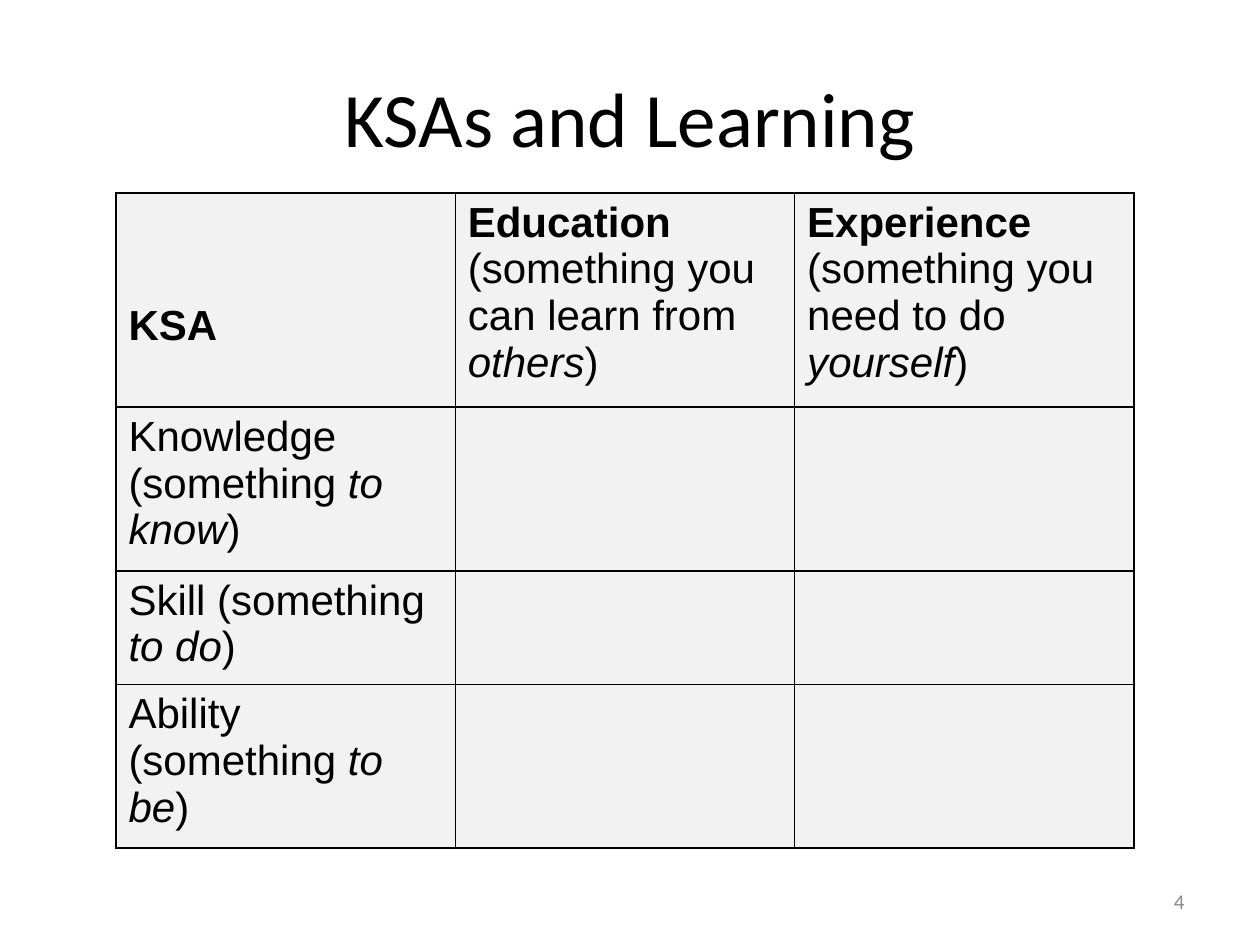
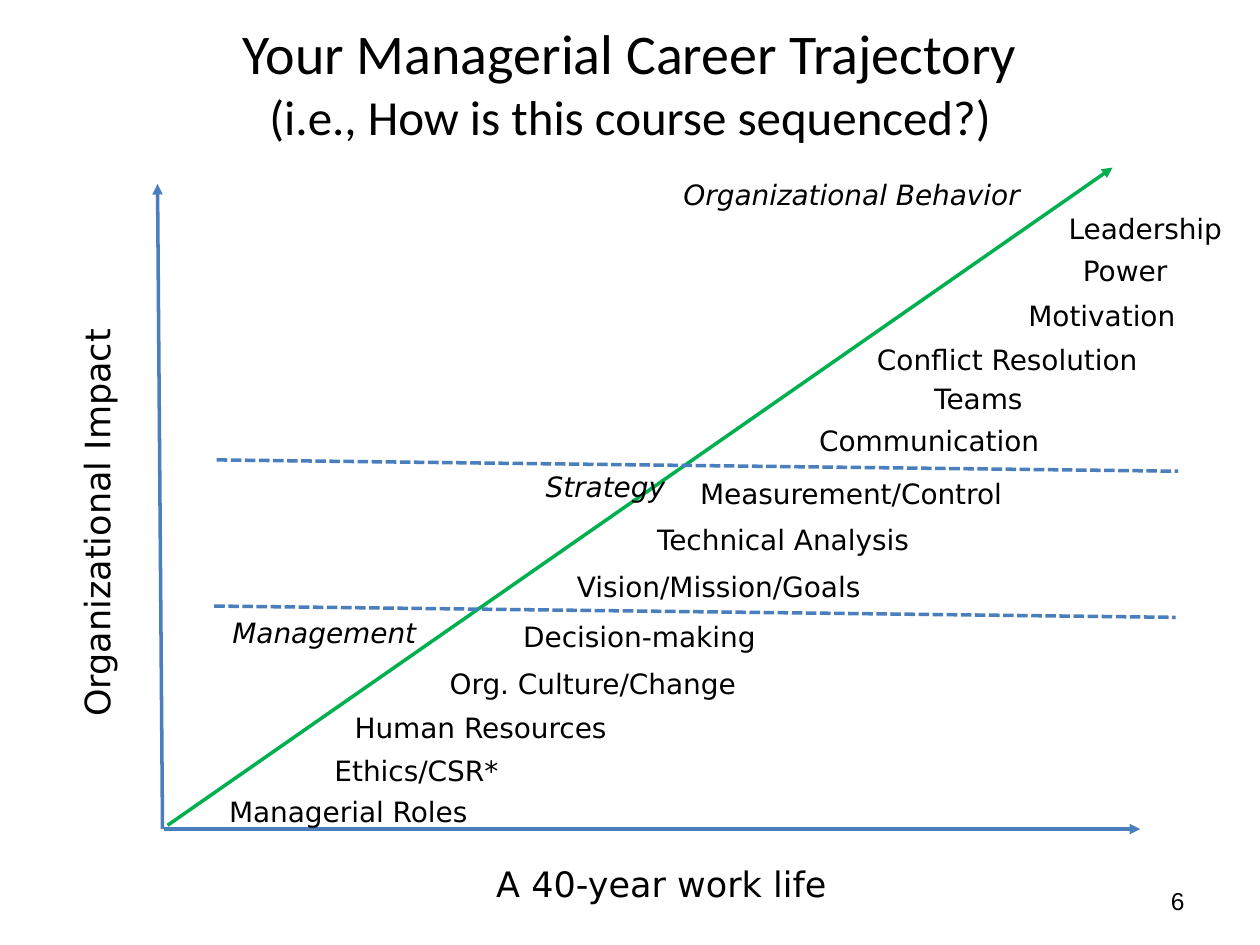
import lxml.etree
import pptx
import pptx.dml.color
import pptx.enum.dml
import pptx.enum.shapes
import pptx.enum.text
import pptx.oxml.ns
import pptx.util

Inches = pptx.util.Inches
Pt = pptx.util.Pt
qn = pptx.oxml.ns.qn
ALIGN = pptx.enum.text.PP_ALIGN
ANCHOR = pptx.enum.text.MSO_ANCHOR

HUES = {
    "ink": "000000",
    "gray": "898989",
    "cell": "F2F2F2",
    "blue": "4B7EBC",
    "green": "00B050",
}


class Deck:
    """Holds the shared style and the current slide."""

    def __init__(self):
        self.prs = pptx.Presentation()
        self.prs.slide_width = Inches(10)
        self.prs.slide_height = Inches(7.5)
        self.slide = None

    def hue(self, name):
        return pptx.dml.color.RGBColor.from_string(HUES[name])

    def font(self, para, size, face, hue="ink", italic=None):
        para.font.size = Pt(size)
        para.font.name = face
        para.font.color.rgb = self.hue(hue)
        para.font.italic = italic

    def text(self, box, lines, face="DejaVu Sans", hue="ink", italic=None,
             align=ALIGN.CENTER, anchor=ANCHOR.TOP, turn=0):
        shape = self.slide.shapes.add_textbox(*map(Inches, box))
        shape.rotation = turn
        frame = shape.text_frame
        frame.word_wrap = True
        frame.vertical_anchor = anchor
        for spot, (words, size) in enumerate(lines):
            para = frame.add_paragraph() if spot else frame.paragraphs[0]
            para.text = words
            para.alignment = align
            self.font(para, size, face, hue, italic)

    def page(self, lines, height, number, size, face, hue):
        self.slide = self.prs.slides.add_slide(self.prs.slide_layouts[6])
        self.text((0.5, 0.3, 9, height), lines, "Calibri", anchor=ANCHOR.MIDDLE)
        self.text((7.17, 6.95, 2.33, 0.4), [(number, size)], face, hue,
                  align=ALIGN.RIGHT, anchor=ANCHOR.MIDDLE)

    def label(self, words, left, top, width, italic=None):
        self.text((left, top, width, 0.37), [(words, 16)], italic=italic)

    def line(self, start, end, hue="blue", dash=False):
        line = self.slide.shapes.add_connector(
            pptx.enum.shapes.MSO_CONNECTOR.STRAIGHT,
            *map(Inches, start + end))
        line.line.color.rgb = self.hue(hue)
        line.line.width = Pt(2)
        if dash:
            line.line.dash_style = pptx.enum.dml.MSO_LINE.SQUARE_DOT
        else:
            stroke = line.line._get_or_add_ln()
            lxml.etree.SubElement(stroke, qn("a:tailEnd"), type="triangle")
        lxml.etree.SubElement(line._element.spPr, qn("a:effectLst"))

    def cell(self, cell, paras):
        props = cell._tc.get_or_add_tcPr()
        for side in ("a:lnL", "a:lnR", "a:lnT", "a:lnB"):
            edge = lxml.etree.SubElement(props, qn(side), w=str(Pt(1)))
            fill = lxml.etree.SubElement(edge, qn("a:solidFill"))
            lxml.etree.SubElement(fill, qn("a:srgbClr"), val=HUES["ink"])
        cell.fill.solid()
        cell.fill.fore_color.rgb = self.hue("cell")
        frame = cell.text_frame
        for spot, runs in enumerate(paras):
            para = frame.add_paragraph() if spot else frame.paragraphs[0]
            para.alignment = ALIGN.LEFT
            self.font(para, 24, "Arial")
            for words, style in runs:
                run = para.add_run()
                run.text = words
                run.font.bold = style == "b"
                run.font.italic = style == "i"

    def table(self, box, rows, heights):
        count = len(rows[0])
        table = self.slide.shapes.add_table(
            len(rows), count, *map(Inches, box)).table
        table.first_row = False
        table.horz_banding = False
        for col in table.columns:
            col.width = Inches(box[2] / count)
        for r, (row, height) in enumerate(zip(rows, heights)):
            table.rows[r].height = Inches(height)
            for c, paras in enumerate(row):
                self.cell(table.cell(r, c), paras)
        return table


def learning(deck):
    """Builds the table of skills against ways to learn."""
    deck.page([("KSAs and Learning", 44)], 1.25, "4", 12, "Calibri", "gray")
    rows = [[
        [[("KSA", "b")]],
        [[("Education", "b")],
         [("(something you can learn from ", ""), ("others", "i"), (")", "")]],
        [[("Experience ", "b"), ("(something you need to do ", ""),
          ("yourself", "i"), (")", "")]],
    ]]
    for name, verb in (("Knowledge", "know"), ("Skill", "do"), ("Ability", "be")):
        runs = [(f"{name} (something ", ""), (f"to {verb}", "i"), (")", "")]
        rows.append([[runs], [], []])
    table = deck.table((0.92, 1.53, 8.08, 4.85), rows, (1.58, 1.21, 0.85, 1.21))
    table.cell(0, 0).margin_top = Inches(0.87)


def career(deck):
    """Builds the chart of topics along a career."""
    deck.page([("Your Managerial Career Trajectory", 32),
               ("(i.e., How is this course sequenced?)", 28)],
              0.7, "6", 14, "Arial", "ink")
    deck.line((1.3, 6.58), (9.05, 6.58))
    deck.line((1.29, 6.58), (1.25, 1.46))
    deck.line((1.33, 6.55), (8.83, 1.33), "green")
    topics = [
        ("Managerial Roles", 1.7, 6.26, 2.13),
        ("Ethics/CSR*", 2.16, 5.93, 2.29),
        ("Human Resources", 2.67, 5.59, 2.29),
        ("Org. Culture/Change", 3.17, 5.24, 3.07),
        ("Decision-making", 3.7, 4.87, 2.75),
        ("Vision/Mission/Goals", 4.33, 4.47, 2.75),
        ("Technical Analysis", 4.84, 4.1, 2.75),
        ("Measurement/Control", 5.38, 3.73, 2.75),
        ("Communication", 6, 3.31, 2.75),
        ("Teams", 6.39, 2.98, 2.75),
        ("Conflict Resolution", 6.85, 2.67, 2.29),
        ("Motivation", 7.37, 2.32, 2.75),
        ("Power", 7.86, 1.96, 2.14),
        ("Leadership", 8.35, 1.63, 1.48),
    ]
    for topic in topics:
        deck.label(*topic)
    stages = [
        ("Management", 1.51, 4.84, 2.13),
        ("Strategy", 3.74, 3.68, 2.13),
        ("Organizational Behavior", 5.3, 1.36, 2.92),
    ]
    for stage in stages:
        deck.label(*stage, italic=True)
    deck.text((3.81, 6.8, 2.88, 0.44), [("A 40-year work life", 20)])
    deck.text((-0.9, 3.93, 3.34, 0.44), [("Organizational Impact", 20)], turn=270)
    for left, top in ((1.7, 4.81), (1.72, 3.65)):
        deck.line((left, top), (left + 7.63, top + 0.09), dash=True)


def main():
    """Builds both slides and saves the file."""
    deck = Deck()
    learning(deck)
    career(deck)
    deck.prs.save("out.pptx")


if __name__ == "__main__":
    main()
